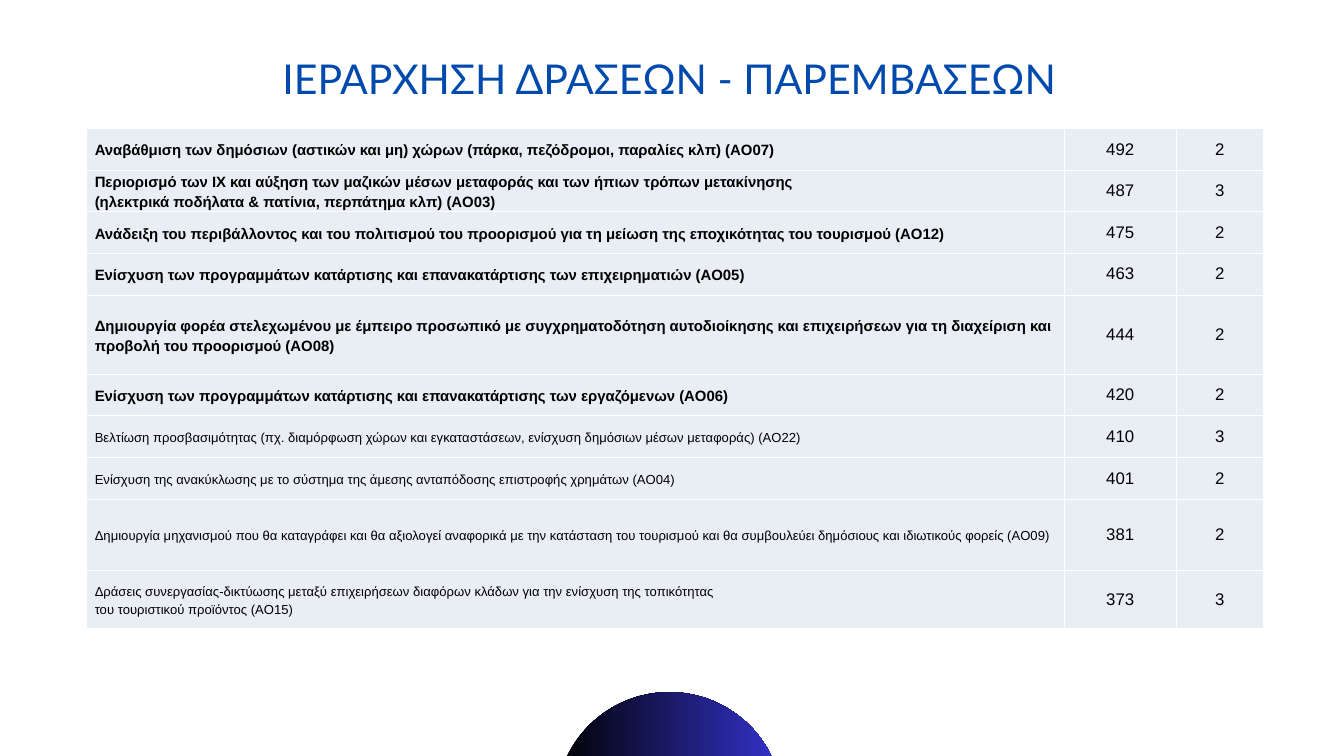
import lxml.etree
import pptx
import pptx.dml.color
import pptx.enum.shapes
import pptx.enum.text
import pptx.oxml.ns
import pptx.util

PX = 9144  # EMU per px, 100 px to the inch
COLUMNS = [1455, 166, 130]
ROW = 62
INDENT = 12
MAIN, MINOR = (16, True), (14, False)  # size and bold of an action

# action, score, grade, row height, style
ACTIONS = [
    ("Αναβάθμιση των δημόσιων (αστικών και μη) χώρων (πάρκα, πεζόδρομοι, παραλίες κλπ) (AO07)",
     492, 2, ROW, MAIN),
    ("Περιορισμό των ΙΧ και αύξηση των μαζικών μέσων μεταφοράς και των ήπιων τρόπων μετακίνησης\n"
     "(ηλεκτρικά ποδήλατα & πατίνια, περπάτημα κλπ) (AO03)",
     487, 3, ROW, MAIN),
    ("Ανάδειξη του περιβάλλοντος και του πολιτισμού του προορισμού "
     "για τη μείωση της εποχικότητας του τουρισμού (AO12)",
     475, 2, ROW, MAIN),
    ("Ενίσχυση των προγραμμάτων κατάρτισης και επανακατάρτισης των επιχειρηματιών (AO05)",
     463, 2, ROW, MAIN),
    ("Δημιουργία φορέα στελεχωμένου με έμπειρο προσωπικό με συγχρηματοδότηση αυτοδιοίκησης "
     "και επιχειρήσεων για τη διαχείριση και προβολή του προορισμού (AO08)",
     444, 2, 118, MAIN),
    ("Ενίσχυση των προγραμμάτων κατάρτισης και επανακατάρτισης των εργαζόμενων (AO06)",
     420, 2, ROW, MAIN),
    ("Βελτίωση προσβασιμότητας (πχ. διαμόρφωση χώρων και εγκαταστάσεων, "
     "ενίσχυση δημόσιων μέσων μεταφοράς) (AO22)",
     410, 3, ROW, MINOR),
    ("Ενίσχυση της ανακύκλωσης με το σύστημα της άμεσης ανταπόδοσης επιστροφής χρημάτων (AO04)",
     401, 2, ROW, MINOR),
    ("Δημιουργία μηχανισμού που θα καταγράφει και θα αξιολογεί αναφορικά με την κατάσταση "
     "του τουρισμού και θα συμβουλεύει δημόσιους και ιδιωτικούς φορείς (AO09)",
     381, 2, 106, MINOR),
    ("Δράσεις συνεργασίας-δικτύωσης μεταξύ επιχειρήσεων διαφόρων κλάδων "
     "για την ενίσχυση της τοπικότητας\nτου τουριστικού προϊόντος (AO15)",
     373, 3, 87, MINOR),
]


def color(value):
    return pptx.dml.color.RGBColor.from_string(value)


def px(*lengths):
    return [pptx.util.Emu(length * PX) for length in lengths]


class Painter:
    title_font, body_font = "Lato", "Arial"
    title_color, text_color = "004AAD", "000000"
    cell_color, border_color = "E9EDF4", "FFFFFF"

    def __init__(self, page):
        self.page = page

    def style(self, para, font, size, value, bold=False):
        for span in para.runs:
            span.font.name = font
            span.font.size = pptx.util.Pt(size)
            span.font.bold = bold
            span.font.color.rgb = color(value)

    def title(self, text, *place):
        box = self.page.shapes.add_textbox(*px(*place))
        box.text_frame.word_wrap = True
        box.text_frame.text = text
        para = box.text_frame.paragraphs[0]
        para.alignment = pptx.enum.text.PP_ALIGN.CENTER
        self.style(para, self.title_font, 44, self.title_color)

    def border(self, cell):
        properties = cell._tc.get_or_add_tcPr()
        for side in ("a:lnL", "a:lnR", "a:lnT", "a:lnB"):
            line = lxml.etree.SubElement(properties, pptx.oxml.ns.qn(side), w="12700")
            fill = lxml.etree.SubElement(line, pptx.oxml.ns.qn("a:solidFill"))
            lxml.etree.SubElement(fill, pptx.oxml.ns.qn("a:srgbClr"), val=self.border_color)

    def cell(self, cell, text, size, bold, is_action):
        self.border(cell)
        cell.fill.solid()
        cell.fill.fore_color.rgb = color(self.cell_color)
        cell.margin_left = cell.margin_right = cell.margin_top = cell.margin_bottom = 0
        cell.vertical_anchor = pptx.enum.text.MSO_ANCHOR.MIDDLE
        cell.text_frame.text = text
        for para in cell.text_frame.paragraphs:
            if is_action:
                para.line_spacing = 1.2
                para._p.get_or_add_pPr().set("marL", str(INDENT * PX))
            else:
                para.alignment = pptx.enum.text.PP_ALIGN.CENTER
            self.style(para, self.body_font, size, self.text_color, bold)

    def ranking(self, left, top, actions):
        height = sum(action[3] for action in actions)
        place = px(left, top, sum(COLUMNS), height)
        table = self.page.shapes.add_table(len(actions), len(COLUMNS), *place).table
        table.first_row = table.horz_banding = False
        for column, width in zip(table.columns, px(*COLUMNS)):
            column.width = width
        for index, (text, score, grade, row_height, (size, bold)) in enumerate(actions):
            table.rows[index].height = px(row_height)[0]
            self.cell(table.cell(index, 0), text, size, bold, True)
            for column, number in enumerate((score, grade), start=1):
                self.cell(table.cell(index, column), str(number), 18, False, False)

    def disc(self, left, top, diameter, start, end):
        disc = self.page.shapes.add_shape(
            pptx.enum.shapes.MSO_SHAPE.OVAL, *px(left, top, diameter, diameter))
        disc.shadow.inherit = False
        disc.line.fill.background()
        disc.fill.gradient()
        disc.fill.gradient_angle = 0
        for stop, value in zip(disc.fill.gradient_stops, (start, end)):
            stop.color.rgb = color(value)


def main():
    deck = pptx.Presentation()
    deck.slide_width, deck.slide_height = px(2000, 1125)
    painter = Painter(deck.slides.add_slide(deck.slide_layouts[6]))
    painter.ranking(129, 191, ACTIONS)
    painter.title("ΙΕΡΑΡΧΗΣΗ ΔΡΑΣΕΩΝ - ΠΑΡΕΜΒΑΣΕΩΝ", 63, 74, 1867, 125)
    painter.disc(827, 1030, 338, "000000", "3533CD")
    deck.save("out.pptx")


if __name__ == "__main__":
    main()
